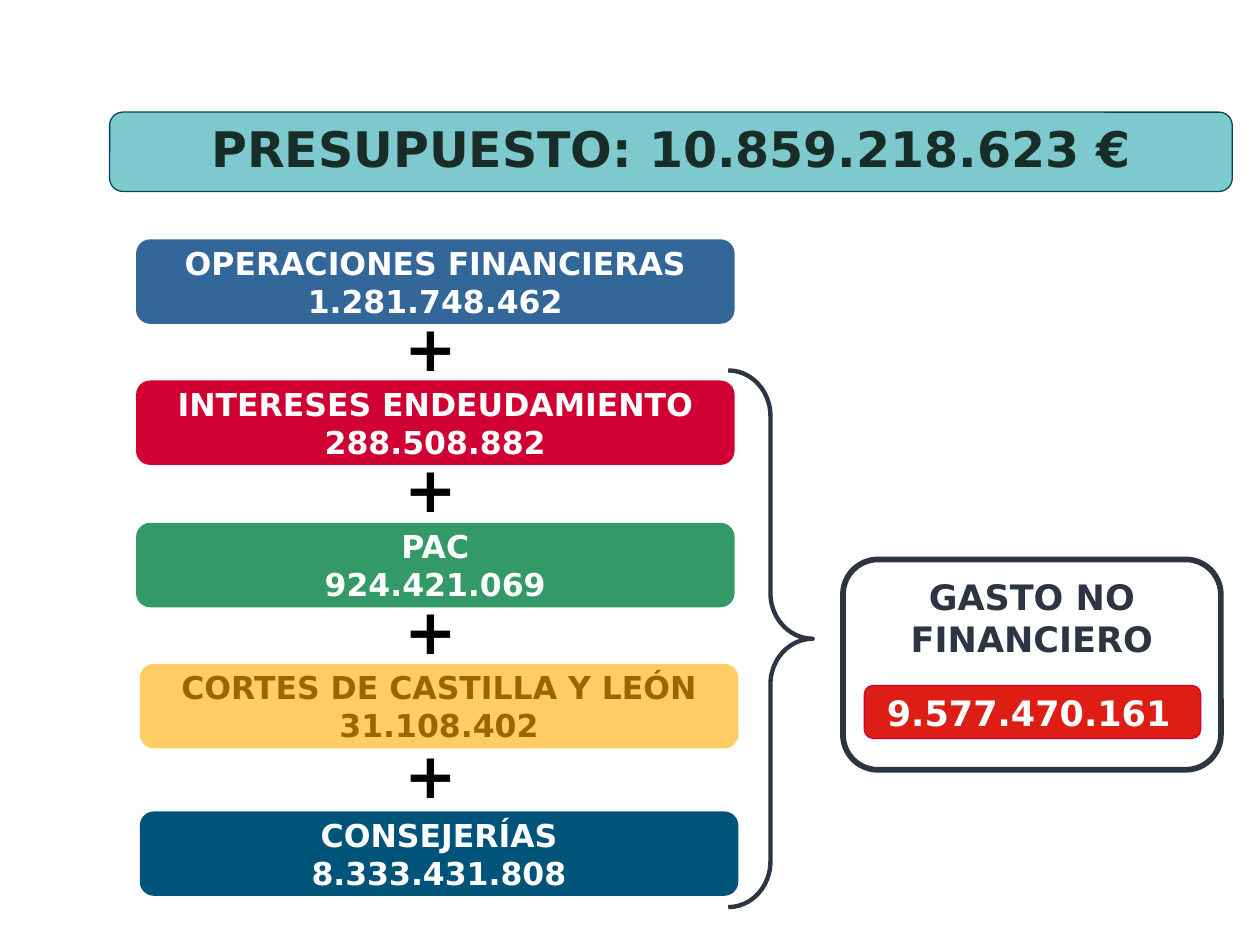
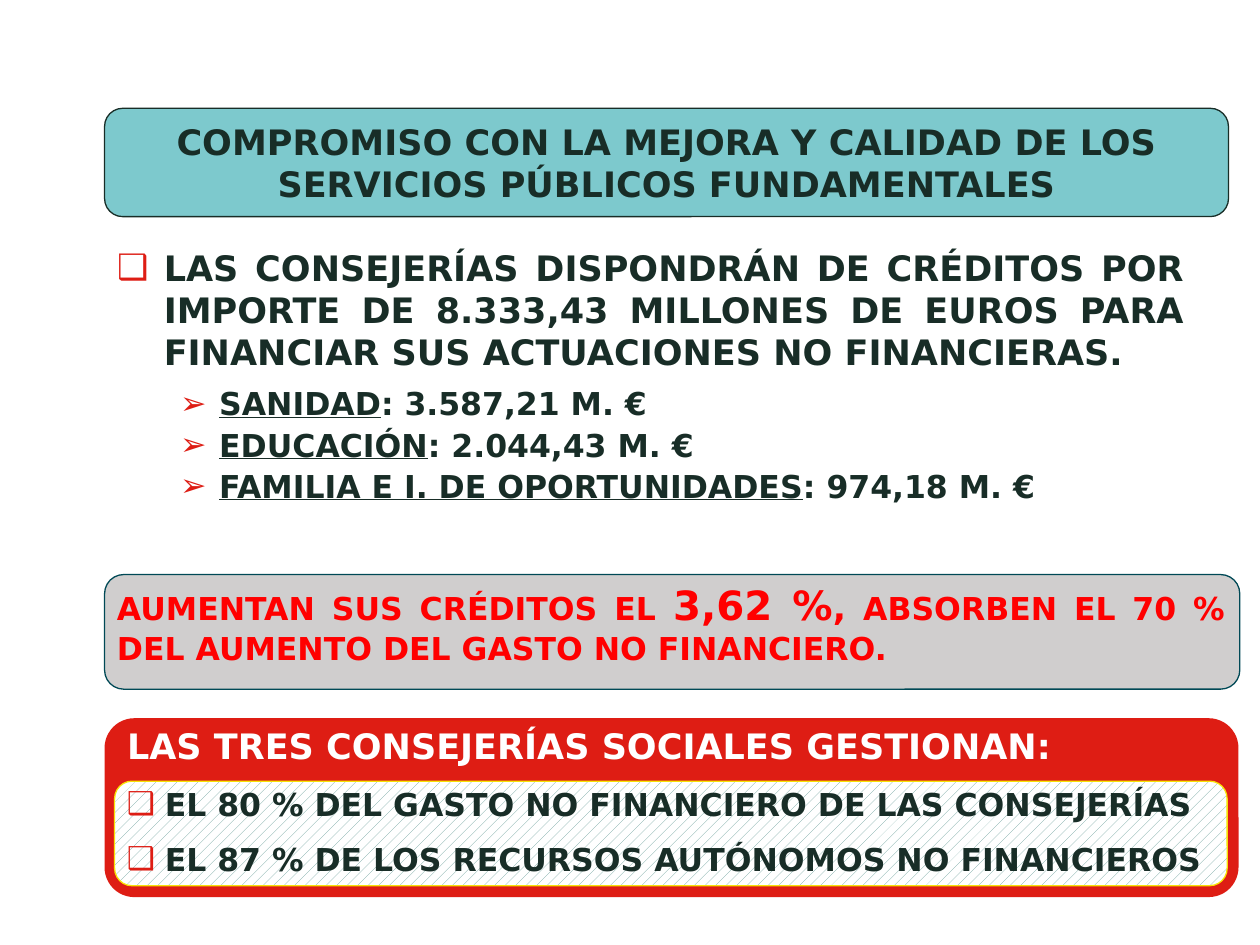
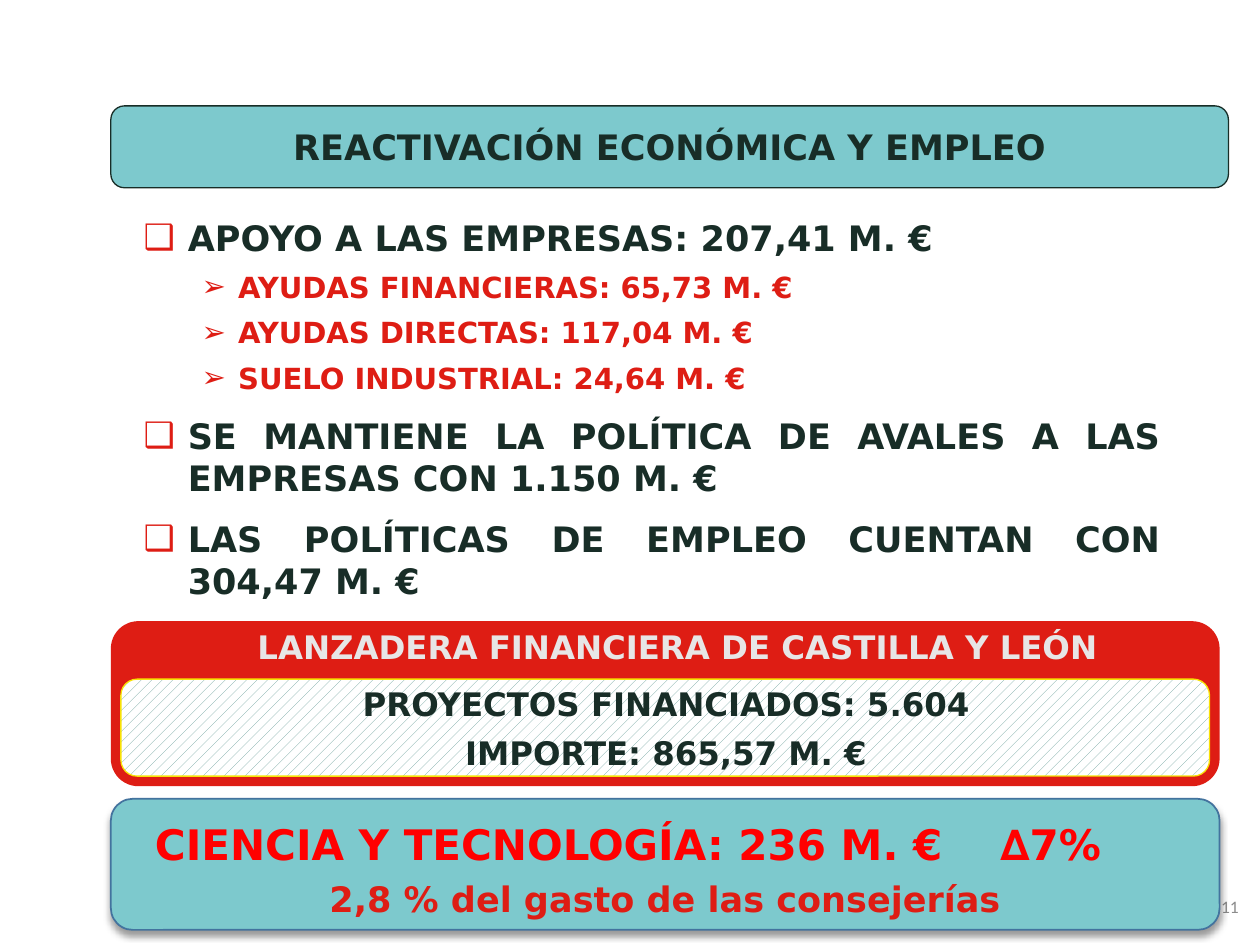
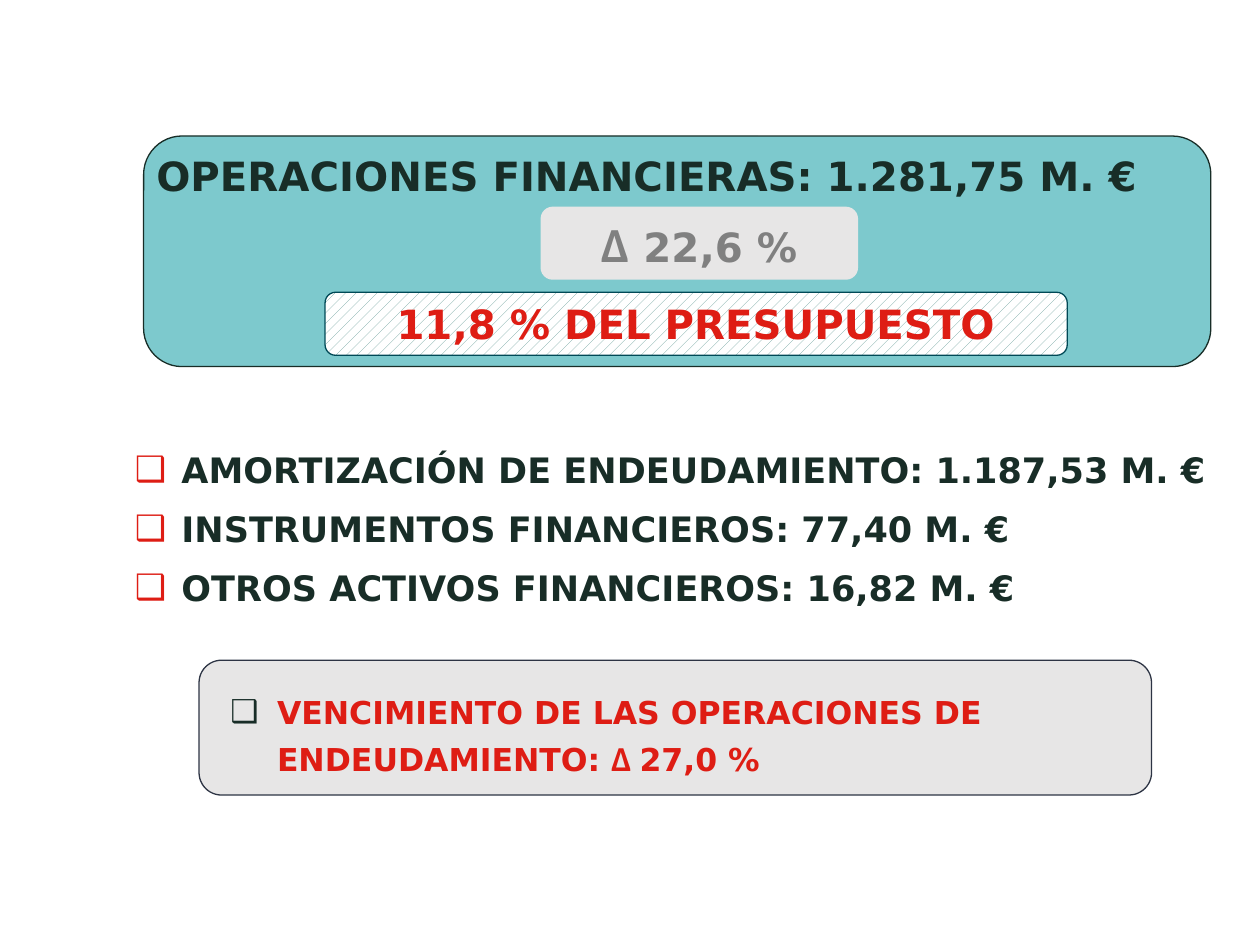
import pptx
import pptx.util
import pptx.dml.color
import pptx.enum.dml
import pptx.enum.shapes
import pptx.enum.text
import pptx.oxml.ns
from dataclasses import dataclass, field
from lxml import etree

Inches = pptx.util.Inches
Pt = pptx.util.Pt
Align = pptx.enum.text.PP_ALIGN
Anchor = pptx.enum.text.MSO_ANCHOR
Preset = pptx.enum.shapes.MSO_SHAPE
qn = pptx.oxml.ns.qn


@dataclass
class Theme:
    face: str = "DejaVu Sans"
    symbol_face: str = "Calibri"
    colors: dict = field(default_factory=lambda: {
        "ink": "182D27", "navy": "2D3444", "black": "000000", "white": "FFFFFF",
        "teal": "7DC9CD", "edge": "004956", "red": "DE1D14", "alert": "FF0000",
        "crimson": "D10033", "blue": "336699", "green": "339966", "sand": "FFCC66",
        "brown": "996600", "ocean": "00547A", "silver": "D0CECE", "mist": "E7E6E6",
        "yellow": "F8E206", "hatch": "6B9F9B", "steel": "43739E", "gray": "808080",
        "page": "8C8C8C"})
    sizes: dict = field(default_factory=lambda: {
        "sign": 36, "budget": 28, "lead": 24, "large": 23, "main": 20,
        "panel": 18.5, "text": 18, "sub": 16.6, "page": 10})

    def color(self, name):
        return pptx.dml.color.RGBColor.from_string(self.colors[name])

    def size(self, name):
        return Pt(self.sizes[name])


THEME = Theme()

SHAPES = {
    "band": ("teal", "ink", 0.75),
    "budget band": ("teal", "edge", 0.75),
    "outline": (None, "navy", 3.25),
    "total": ("red", "crimson", 0.75),
    "brace": (None, "navy", 2.5),
    "notice": ("silver", "edge", 0.75),
    "panel": ("red", None, 0),
    "hatched": ("hatched", "yellow", 0.75),
    "hatched edge": ("hatched", "edge", 0.75),
    "science": ("teal", "steel", 1),
    "growth": ("mist", None, 0),
    "maturity": ("mist", "navy", 0.75),
}


def style(size, color, align=Align.LEFT, before=0, spacing=1.0, level=0,
          bullet=None, tab=None, after=0, face=THEME.face, bold=True):
    return {
        "paragraph": {"alignment": align, "space_before": Pt(before),
                      "space_after": Pt(after), "line_spacing": spacing, "level": level},
        "font": {"size": size, "color": color, "name": face, "bold": bold},
        "bullet": bullet, "tab": tab}


SQUARE, ARROW = "❑", "➢"
STYLES = {
    "budget": style("budget", "ink", Align.CENTER),
    "title": style("main", "ink", Align.CENTER),
    "left title": style("large", "ink"),
    "card": style("text", "white", Align.CENTER),
    "sand card": style("text", "brown", Align.CENTER),
    "sign": style("sign", "black"),
    "spending": style("main", "navy", Align.CENTER),
    "white": style("main", "white"),
    "point": style("main", "ink", Align.JUSTIFY, 11.1, bullet=(SQUARE, "red", 0.35, 0.35)),
    "credit point": style("main", "ink", Align.JUSTIFY, 4, bullet=(SQUARE, "red", 0.37, 0.37)),
    "first credit": style("text", "ink", Align.JUSTIFY, 9, 0.9, 1, (ARROW, "red", 0.81, 0.31)),
    "credit": style("text", "ink", Align.JUSTIFY, 4, 0.9, 1, (ARROW, "red", 0.81, 0.31)),
    "aid": style("sub", "red", Align.JUSTIFY, 6, 1.0, 1, (ARROW, "red", 0.75, 0.29)),
    "notice": style("text", "alert", Align.JUSTIFY),
    "share": style("text", "ink", before=10, bullet=(SQUARE, "red", 0.3, 0.3)),
    "page": style("page", "page", Align.RIGHT, face=THEME.symbol_face, bold=False),
    "launcher": style("panel", "mist", Align.CENTER),
    "project": style("panel", "ink", Align.CENTER, 6),
    "science": style("lead", "alert", spacing=1.2, tab=6.71),
    "science share": style("main", "red", Align.CENTER, spacing=1.2, after=6),
    "operation": style("main", "ink", before=5, spacing=1.2, bullet=(SQUARE, "red", 0.37, 0.37)),
    "budget share": style("large", "red", Align.CENTER),
    "growth": style("large", "gray", Align.CENTER),
    "maturity": style("text", "red", spacing=1.14, bullet=(SQUARE, "ink", 0.37, 0.37)),
}

CARD_WIDTH, CARD_HEIGHT = 4.75, 0.67
CARDS = [
    ("OPERACIONES FINANCIERAS", "1.281.748.462", "blue", "card", 1.08, 1.9),
    ("INTERESES ENDEUDAMIENTO", "288.508.882", "crimson", "card", 1.08, 3.02),
    ("PAC", "924.421.069", "green", "card", 1.08, 4.15),
    ("CORTES DE CASTILLA Y LEÓN", "31.108.402", "sand", "sand card", 1.11, 5.27),
    ("CONSEJERÍAS", "8.333.431.808", "ocean", "card", 1.11, 6.44),
]
UNDERLINED = {"underline": True}

SLIDES = [
    {
        "band": ("budget band", (0.87, 0.89, 8.91, 0.63)),
        "title": ((0.87, 0.89, 8.91, 0.57), [("budget", "PRESUPUESTO: 10.859.218.623 €")]),
        "cards": CARDS,
        "parts": [
            ("outline", (6.69, 4.44, 3, 1.67), []),
            ("total", (6.86, 5.44, 2.67, 0.42), []),
            ("brace", (5.78, 2.94, 0.67, 4.26), []),
            (None, (6.69, 4.52, 3, 0.77), [("spending", "GASTO NO FINANCIERO")]),
            (None, (6.94, 5.44, 2.58, 0.43), [("white", "9.577.470.161")]),
        ],
    },
    {
        "band": ("band", (0.83, 0.86, 8.92, 0.86)),
        "title": ((0.83, 0.86, 8.92, 0.86), [
            ("title", "COMPROMISO CON LA MEJORA Y CALIDAD DE LOS"),
            ("title", "SERVICIOS PÚBLICOS FUNDAMENTALES")]),
        "body": ((0.83, 1.91, 8.67, 2.5), [
            ("credit point", "LAS CONSEJERÍAS DISPONDRÁN DE CRÉDITOS POR IMPORTE DE 8.333,43 "
                             "MILLONES DE EUROS PARA FINANCIAR SUS ACTUACIONES NO FINANCIERAS."),
            ("first credit", ("SANIDAD", UNDERLINED), ": 3.587,21 M. €"),
            ("credit", ("EDUCACIÓN", UNDERLINED), ": 2.044,43 M. €"),
            ("credit", ("FAMILIA E I. DE OPORTUNIDADES", UNDERLINED), ": 974,18 M. €")]),
        "parts": [
            ("notice", (0.83, 4.56, 9.01, 0.91), []),
            (None, (0.83, 4.56, 8.99, 0.79), [
                ("notice", "AUMENTAN SUS CRÉDITOS EL ", ("3,62 %", {"size": "large"}),
                 (",", {"size": "main"}),
                 " ABSORBEN EL 70 % DEL AUMENTO DEL GASTO NO FINANCIERO.")]),
            ("panel", (0.83, 5.7, 9, 1.42), []),
            ("hatched", (0.91, 6.2, 8.83, 0.83), []),
            (None, (0.91, 5.7, 8.42, 0.44),
             [("white", "LAS TRES CONSEJERÍAS SOCIALES GESTIONAN:")]),
            (None, (0.91, 6.18, 9.33, 0.86), [
                ("share", "EL 80 % DEL GASTO NO FINANCIERO DE LAS CONSEJERÍAS"),
                ("share", "EL 87 % DE LOS RECURSOS AUTÓNOMOS NO FINANCIEROS")]),
        ],
    },
    {
        "band": ("band", (0.88, 0.84, 8.87, 0.65)),
        "title": ((0.88, 0.84, 8.87, 0.65), [("title", "REACTIVACIÓN ECONÓMICA Y EMPLEO")]),
        "body": ((1.04, 1.67, 8.27, 3.13), [
            ("point", "APOYO A LAS EMPRESAS: 207,41 M. €"),
            ("aid", "AYUDAS FINANCIERAS: 65,73 M. €"),
            ("aid", "AYUDAS DIRECTAS: 117,04 M. €"),
            ("aid", "SUELO INDUSTRIAL: 24,64 M. €"),
            ("point", "SE MANTIENE LA POLÍTICA DE AVALES A LAS EMPRESAS CON 1.150 M. €"),
            ("point", "LAS POLÍTICAS DE EMPLEO CUENTAN CON 304,47 M. €")]),
        "parts": [
            (None, (9.53, 7.06, 0.4, 0.35), [("page", "11")]),
            ("panel", (0.88, 4.93, 8.8, 1.31), []),
            ("hatched", (0.96, 5.39, 8.64, 0.77), []),
            (None, (0.96, 4.93, 8.83, 0.4),
             [("launcher", "LANZADERA FINANCIERA DE CASTILLA Y LEÓN")]),
            (None, (0.96, 5.38, 8.65, 0.8), [
                ("project", "PROYECTOS FINANCIADOS: 5.604"),
                ("project", "IMPORTE: 865,57 M. €")]),
            ("science", (0.88, 6.34, 8.8, 1.04), [
                ("science", "CIENCIA Y TECNOLOGÍA: 236 M. €\t∆7%"),
                ("science share", "2,8 % del gasto de las consejerías")]),
        ],
    },
    {
        "band": ("band", (1.14, 1.08, 8.47, 1.83)),
        "title": ((1.14, 1.15, 8.67, 0.49),
                  [("left title", "OPERACIONES FINANCIERAS: 1.281,75 M. €")]),
        "body": ((0.97, 3.44, 8.94, 1.65), [
            ("operation", "AMORTIZACIÓN DE ENDEUDAMIENTO: 1.187,53 M. €"),
            ("operation", "INSTRUMENTOS FINANCIEROS: 77,40 M. €"),
            ("operation", "OTROS ACTIVOS FINANCIEROS: 16,82 M. €")]),
        "parts": [
            ("hatched edge", (2.58, 2.32, 5.89, 0.5),
             [("budget share", "11,8 % DEL PRESUPUESTO")]),
            ("growth", (4.29, 1.64, 2.52, 0.58), [
                ("growth", ("Δ", {"size": "budget", "name": THEME.symbol_face}), " 22,6 %")]),
            ("maturity", (1.58, 5.24, 7.56, 1.07), []),
            (None, (1.73, 5.41, 7.41, 1.25), [
                ("maturity", "VENCIMIENTO DE LAS OPERACIONES DE ENDEUDAMIENTO: ",
                 ("Δ ", {"size": "main", "name": THEME.symbol_face}), "27,0 %")]),
        ],
    },
]


def apply(target, values):
    for name, value in values.items():
        setattr(target, name, value)


def place(shape, frame):
    apply(shape, dict(zip(("left", "top", "width", "height"), map(Inches, frame))))


def add_bullet(paragraph, bullet):
    character, color, left, hanging = bullet
    properties = paragraph._p.get_or_add_pPr()
    properties.set("marL", str(Inches(left)))
    properties.set("indent", str(-Inches(hanging)))
    bullet_color = etree.SubElement(properties, qn("a:buClr"))
    etree.SubElement(bullet_color, qn("a:srgbClr"), val=THEME.colors[color])
    etree.SubElement(properties, qn("a:buFont"), typeface=THEME.face)
    etree.SubElement(properties, qn("a:buChar"), char=character)


def add_tab(paragraph, position):
    tabs = etree.SubElement(paragraph._p.get_or_add_pPr(), qn("a:tabLst"))
    etree.SubElement(tabs, qn("a:tab"), pos=str(Inches(position)), algn="l")


def format_font(font, values):
    values = dict(values)
    font.color.rgb = THEME.color(values.pop("color"))
    values["size"] = THEME.size(values["size"])
    apply(font, values)


def write(shape, paragraphs, anchor=Anchor.TOP, margin=0.1):
    text_frame = shape.text_frame
    apply(text_frame, {
        "word_wrap": True, "auto_size": pptx.enum.text.MSO_AUTO_SIZE.NONE,
        "vertical_anchor": anchor,
        "margin_left": Inches(margin), "margin_right": Inches(margin),
        "margin_top": Inches(min(margin, 0.05)), "margin_bottom": Inches(min(margin, 0.05))})
    for index, (style_name, *runs) in enumerate(paragraphs):
        paragraph = text_frame.add_paragraph() if index else text_frame.paragraphs[0]
        chosen = STYLES[style_name]
        if chosen["bullet"]:
            add_bullet(paragraph, chosen["bullet"])
        if chosen["tab"]:
            add_tab(paragraph, chosen["tab"])
        apply(paragraph, chosen["paragraph"])
        if index == 0:
            paragraph.space_before = Pt(0)
        for item in runs:
            text, changes = (item, {}) if isinstance(item, str) else item
            run = paragraph.add_run()
            run.text = text
            format_font(run.font, chosen["font"] | changes)


def paint(shape, fill, line, weight):
    shape.shadow.inherit = False
    if fill is None:
        shape.fill.background()
    elif fill == "hatched":
        shape.fill.patterned()
        apply(shape.fill, {"pattern": pptx.enum.dml.MSO_PATTERN.PERCENT_20})
        shape.fill.fore_color.rgb = THEME.color("hatch")
        shape.fill.back_color.rgb = THEME.color("white")
    else:
        shape.fill.solid()
        shape.fill.fore_color.rgb = THEME.color(fill)
    if line is None:
        shape.line.fill.background()
    else:
        shape.line.color.rgb = THEME.color(line)
        shape.line.width = Pt(weight)


def add_shadow(shape):
    effects = shape._element.spPr.find(qn("a:effectLst"))
    shadow = etree.SubElement(effects, qn("a:outerShdw"), blurRad=str(Pt(4)),
                              dist=str(Pt(3)), dir="5400000", rotWithShape="0")
    color = etree.SubElement(shadow, qn("a:srgbClr"), val=THEME.colors["black"])
    etree.SubElement(color, qn("a:alpha"), val="40000")


def add_box(slide, frame, look, preset=Preset.ROUNDED_RECTANGLE):
    shape = slide.shapes.add_shape(preset, *map(Inches, frame))
    paint(shape, *look)
    return shape


def add_part(slide, kind, frame, paragraphs):
    if kind is None:
        shape = slide.shapes.add_textbox(*map(Inches, frame))
        write(shape, paragraphs)
        return
    preset = Preset.RIGHT_BRACE if kind == "brace" else Preset.ROUNDED_RECTANGLE
    shape = add_box(slide, frame, SHAPES[kind], preset)
    if kind == "brace":
        shape.adjustments[0] = 0.54
    if kind == "science":
        add_shadow(shape)
    if paragraphs:
        write(shape, paragraphs, Anchor.MIDDLE, 0.3 if kind == "science" else 0.1)


def add_cards(slide, cards):
    sign_left, sign_width, sign_height, sign_lift = 3.21, 0.5, 0.6, 0.35
    previous_bottom = None
    for label, amount, fill, style_name, left, top in cards:
        card = add_box(slide, (left, top, CARD_WIDTH, CARD_HEIGHT), (fill, None, 0))
        write(card, [(style_name, label), (style_name, amount)], Anchor.MIDDLE)
        if previous_bottom is not None:
            sign_top = (previous_bottom + top) / 2 - sign_lift
            sign = slide.shapes.add_textbox(
                *map(Inches, (sign_left, sign_top, sign_width, sign_height)))
            write(sign, [("sign", "+")], margin=0)
        previous_bottom = top + CARD_HEIGHT


def build_slide(presentation, content):
    layout = presentation.slide_layouts[1 if "body" in content else 5]
    slide = presentation.slides.add_slide(layout)
    kind, frame = content["band"]
    add_box(slide, frame, SHAPES[kind])
    title = slide.shapes.title
    slide.shapes._spTree.append(title._element)
    frame, paragraphs = content["title"]
    place(title, frame)
    write(title, paragraphs, Anchor.MIDDLE)
    if "body" in content:
        frame, paragraphs = content["body"]
        body = slide.placeholders[1]
        place(body, frame)
        write(body, paragraphs)
    add_cards(slide, content.get("cards", []))
    for part in content["parts"]:
        add_part(slide, *part)


def main():
    presentation = pptx.Presentation()
    apply(presentation, {"slide_width": Inches(10), "slide_height": Inches(7.5)})
    for content in SLIDES:
        build_slide(presentation, content)
    presentation.save("out.pptx")


if __name__ == "__main__":
    main()
